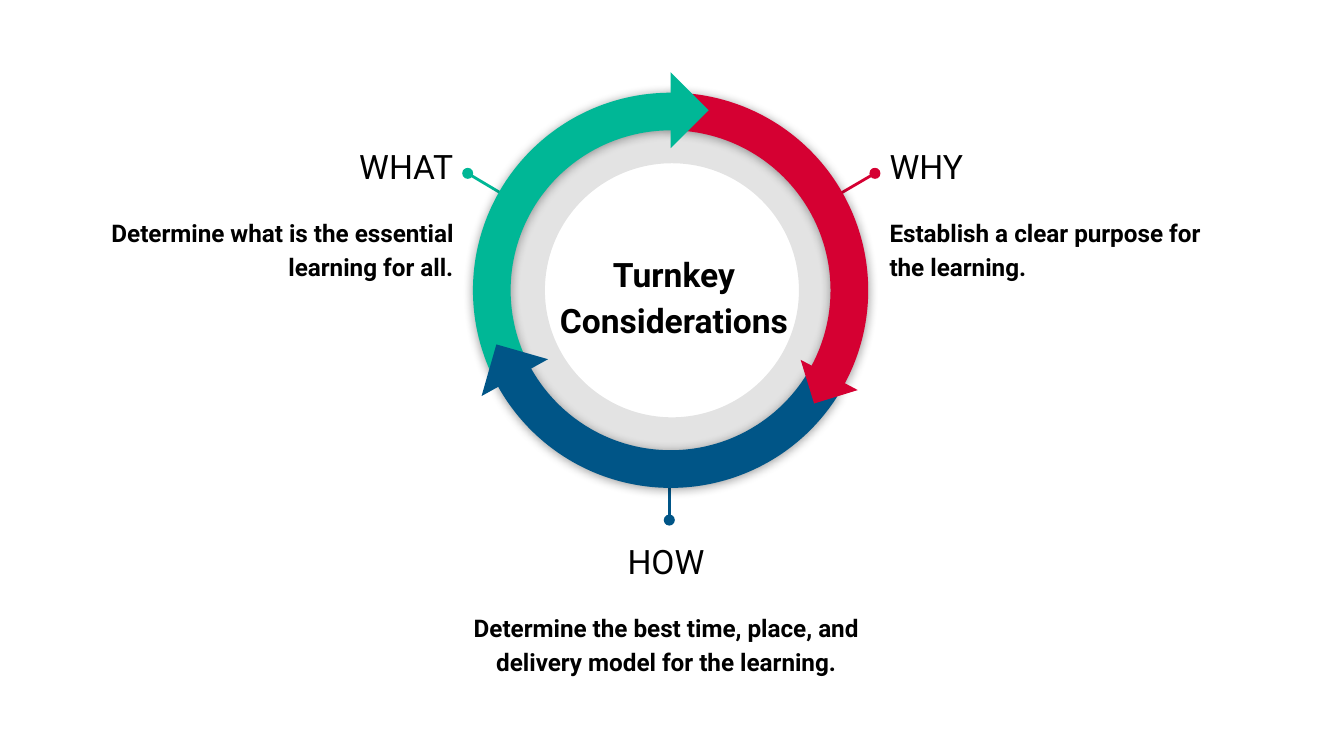
from dataclasses import dataclass

from lxml.etree import SubElement
from pptx import Presentation
from pptx.dml.color import RGBColor
from pptx.enum.shapes import MSO_CONNECTOR, MSO_SHAPE
from pptx.enum.text import MSO_ANCHOR, MSO_AUTO_SIZE, PP_ALIGN
from pptx.oxml.ns import qn
from pptx.util import Inches, Pt


@dataclass(frozen=True)
class Theme:
    font: str = "Roboto"
    text: str = "000000"
    why: str = "D50032"
    how: str = "005587"
    what: str = "00B796"
    heading_size: int = 18
    body_size: int = 13
    gap: int = 15
    line_spacing: float = 1.15


THEME = Theme()
RING_LEFT, RING_TOP, RING_SIZE, RING_BAND = 3.52, 0.69, 2.94, 0.28

CALLOUTS = [
    ("WHAT", "Determine what is the essential learning for all.", THEME.what,
     (0.69, 0.94, 2.78), PP_ALIGN.RIGHT, (3.48, 1.29, 3.95, 1.57)),
    ("WHY", "Establish a clear purpose for the learning.", THEME.why,
     (6.52, 0.94, 2.78), PP_ALIGN.LEFT, (6.51, 1.29, 6.03, 1.57)),
    ("HOW", "Determine the best time, place, and delivery model for the learning.", THEME.how,
     (3.34, 3.88, 3.23), PP_ALIGN.CENTER, (4.98, 3.87, 4.98, 3.37)),
]


def color(value):
    return RGBColor.from_string(value)


def add_filled_shape(slide, kind, left, top, size, fill, rotation=0):
    shape = slide.shapes.add_shape(kind, Inches(left), Inches(top), Inches(size), Inches(size))
    shape.rotation = rotation
    shape.shadow.inherit = False
    shape.fill.solid()
    shape.fill.fore_color.rgb = color(fill)
    shape.line.fill.background()
    return shape


def add_backdrop(slide):
    donut = add_filled_shape(slide, MSO_SHAPE.DONUT, 3.61, 0.77, 2.78, THEME.text)
    donut.adjustments[0] = 0.16
    fill_color = donut.element.spPr.find(qn("a:solidFill"))[0]
    SubElement(fill_color, qn("a:alpha"), val="11000")


def add_soft_shadow(shape):
    effects = shape.element.spPr.find(qn("a:effectLst"))
    shadow = SubElement(effects, qn("a:outerShdw"), blurRad=str(Pt(5.6)), dist=str(Pt(0.8)),
                        dir="5400000", algn="ctr", rotWithShape="0")
    shadow_color = SubElement(shadow, qn("a:srgbClr"), val=THEME.text)
    SubElement(shadow_color, qn("a:alpha"), val="40000")


def add_arc(slide, fill, rotation, start, end, flipped):
    arc = add_filled_shape(slide, MSO_SHAPE.BLOCK_ARC, RING_LEFT, RING_TOP, RING_SIZE,
                           fill, rotation)
    adjustment_per_degree = 0.6
    arc.adjustments[0] = start * adjustment_per_degree
    arc.adjustments[1] = end * adjustment_per_degree
    arc.adjustments[2] = RING_BAND / RING_SIZE
    if flipped:
        arc.element.spPr.get_or_add_xfrm().set("flipH", "1")
    add_soft_shadow(arc)


def add_arrowhead(slide, fill, left, top, size, rotation):
    add_filled_shape(slide, MSO_SHAPE.RIGHT_TRIANGLE, left, top, size, fill, rotation)


def add_pointer(slide, ends, line_color):
    pointer = slide.shapes.add_connector(MSO_CONNECTOR.STRAIGHT, *map(Inches, ends))
    pointer.line.color.rgb = color(line_color)
    pointer.line.width = Pt(1.5)
    line = pointer.element.spPr.find(qn("a:ln"))
    SubElement(line, qn("a:headEnd"), type="oval")
    SubElement(pointer.element.spPr, qn("a:effectLst"))


def set_up_frame(frame, anchor):
    frame.word_wrap = True
    frame.auto_size = MSO_AUTO_SIZE.NONE
    frame.vertical_anchor = anchor
    frame.margin_left = frame.margin_right = Inches(0.1)
    frame.margin_top = frame.margin_bottom = Inches(0.1)


def write(paragraph, text, size, bold, alignment):
    paragraph.text = text
    paragraph.alignment = alignment
    paragraph.line_spacing = THEME.line_spacing
    paragraph.font.name = THEME.font
    paragraph.font.size = Pt(size)
    paragraph.font.bold = bold
    paragraph.font.color.rgb = color(THEME.text)


def add_callout(slide, heading, body, accent, place, alignment, pointer_ends):
    add_pointer(slide, pointer_ends, accent)
    left, top, width = place
    box = slide.shapes.add_textbox(Inches(left), Inches(top), Inches(width), Inches(0.73))
    frame = box.text_frame
    set_up_frame(frame, MSO_ANCHOR.TOP)
    write(frame.paragraphs[0], heading, THEME.heading_size, False, alignment)
    detail = frame.add_paragraph()
    write(detail, body, THEME.body_size, True, alignment)
    detail.space_before = Pt(THEME.gap)


def set_title(slide, text):
    title = slide.shapes.title
    title.left, title.top = Inches(4.03), Inches(1.75)
    title.width, title.height = Inches(1.97), Inches(0.88)
    set_up_frame(title.text_frame, MSO_ANCHOR.MIDDLE)
    write(title.text_frame.paragraphs[0], text, THEME.heading_size, True, PP_ALIGN.CENTER)


def add_cycle(slide):
    add_arc(slide, THEME.why, 30, 240.24, 0, False)
    add_arc(slide, THEME.what, 330, 239.14, 357.88, True)
    add_arrowhead(slide, THEME.what, 4.79, 0.62, 0.4, 225)
    add_arc(slide, THEME.how, 210, 238.6, 358.38, True)
    add_arrowhead(slide, THEME.why, 6, 2.62, 0.34, 342.9)
    add_arrowhead(slide, THEME.how, 3.63, 2.61, 0.4, 106)


def main():
    presentation = Presentation()
    presentation.slide_width = Inches(10)
    presentation.slide_height = presentation.slide_width * 9 // 16
    slide = presentation.slides.add_slide(presentation.slide_layouts.get_by_name("Title Only"))
    set_title(slide, "Turnkey Considerations")
    add_backdrop(slide)
    for callout in CALLOUTS:
        add_callout(slide, *callout)
    add_cycle(slide)
    presentation.save("out.pptx")


if __name__ == "__main__":
    main()
